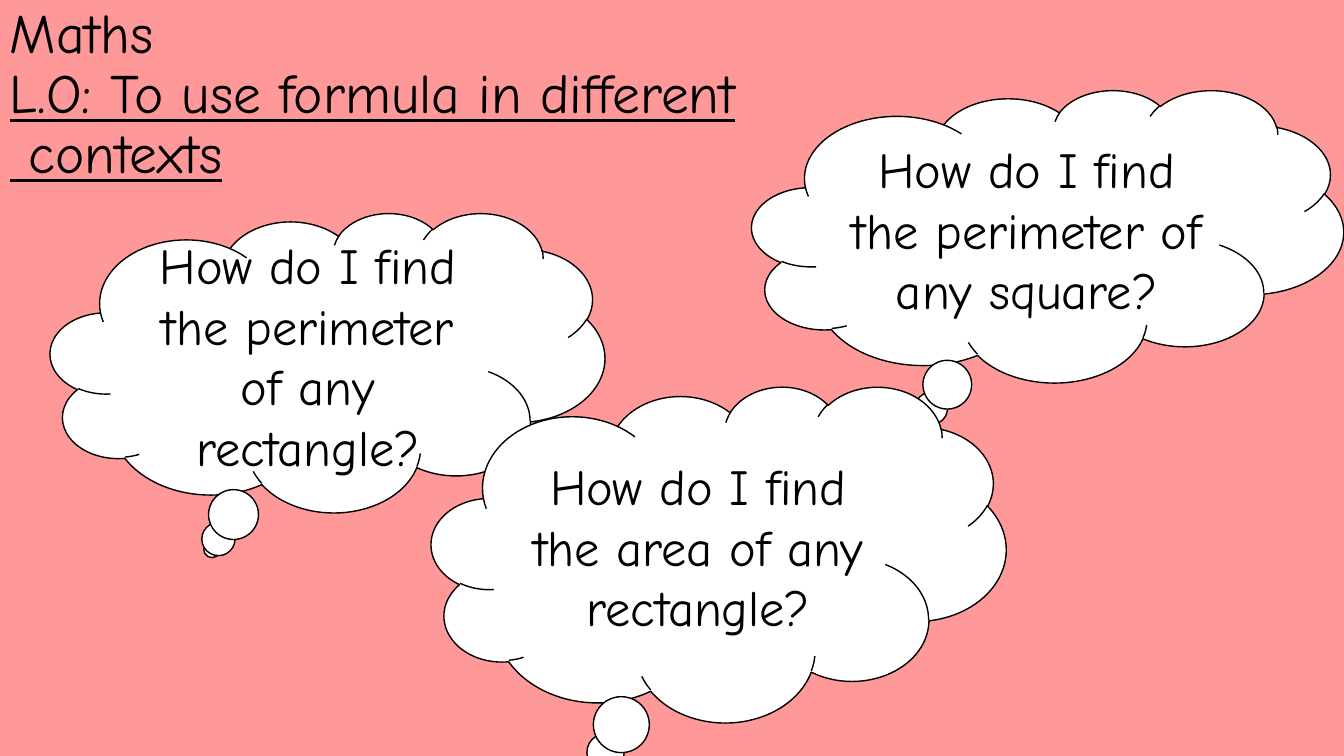
from dataclasses import dataclass

from pptx import Presentation
from pptx.dml.color import RGBColor as Rgb
from pptx.enum.shapes import MSO_SHAPE as Shape
from pptx.enum.text import MSO_ANCHOR as Anchor, PP_ALIGN as Align
from pptx.util import Pt

FONT = "Comic Neue"
COLORS = {"back": "FF9999", "cloud": "FFFFFF", "ink": "000000"}


@dataclass
class Cloud:
    left: float
    top: float
    width: float
    height: float
    text: str


CLOUDS = [
    Cloud(36, 151.9, 396, 213.8, "How do I find the perimeter of any rectangle?"),
    Cloud(537.1, 64.1, 422.6, 208.8, "How do I find the perimeter of any square?"),
    Cloud(308.2, 275.8, 410.4, 239.8, "How do I find the area of any rectangle?"),
]


def color(name: str) -> Rgb:
    return Rgb.from_string(COLORS[name])


def write(para, text: str, *, size: float, under: bool = False) -> None:
    """Add text to a paragraph, with a line break at each newline."""
    for i, line in enumerate(text.split("\n")):
        if i:
            para.add_line_break()
        run = para.add_run()
        run.text = line
        font = run.font
        font.name, font.size = FONT, Pt(size)
        font.underline = under
        font.color.rgb = color("ink")


def add_title(slide) -> None:
    box = slide.shapes.add_textbox(Pt(0), Pt(37.4), Pt(828), Pt(104.4))
    frame = box.text_frame
    frame.word_wrap = True
    frame.vertical_anchor = Anchor.MIDDLE
    frame.margin_bottom = Pt(46.4)
    para = frame.paragraphs[0]
    para.line_spacing = 0.9
    write(para, "Maths", size=39.6)
    para.add_line_break()
    write(para, "L.O: To use formula in different\n contexts", size=39.6, under=True)


def add_cloud(slide, cloud: Cloud) -> None:
    place = (cloud.left, cloud.top, cloud.width, cloud.height)
    shape = slide.shapes.add_shape(Shape.CLOUD_CALLOUT, *map(Pt, place))
    shape.shadow.inherit = False
    shape.fill.solid()
    shape.fill.fore_color.rgb = color("cloud")
    shape.line.color.rgb = color("ink")
    shape.line.width = Pt(1)
    frame = shape.text_frame
    frame.word_wrap = True
    frame.vertical_anchor = Anchor.MIDDLE
    para = frame.paragraphs[0]
    para.alignment = Align.CENTER
    write(para, cloud.text, size=36)


def main() -> None:
    deck = Presentation()
    deck.slide_width, deck.slide_height = Pt(960), Pt(540)
    slide = deck.slides.add_slide(deck.slide_layouts[6])
    back = slide.background.fill
    back.solid()
    back.fore_color.rgb = color("back")
    add_title(slide)
    for cloud in CLOUDS:
        add_cloud(slide, cloud)
    deck.save("out.pptx")


if __name__ == "__main__":
    main()
